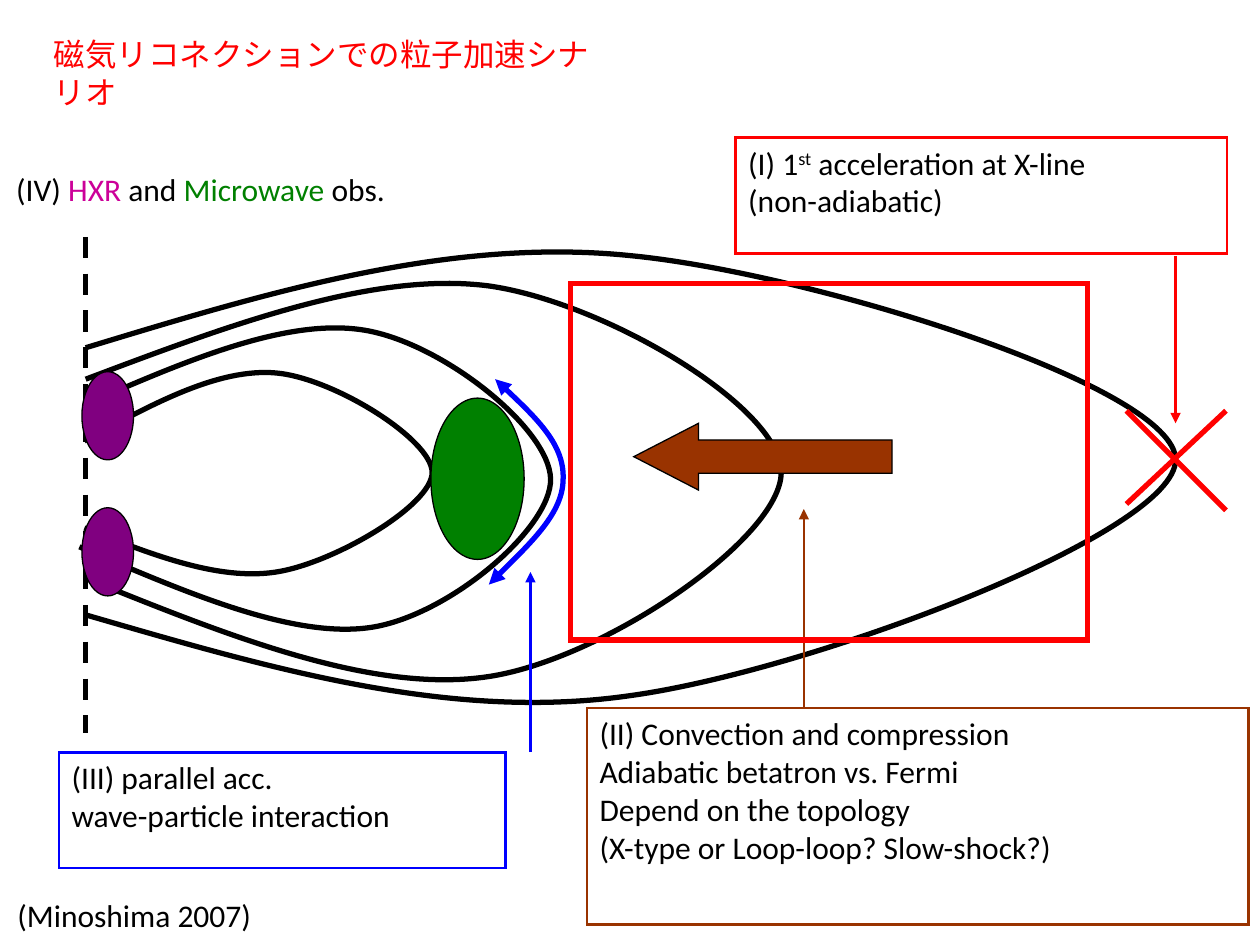
from pptx import Presentation
from pptx.dml.color import RGBColor
from pptx.enum.dml import MSO_LINE
from pptx.enum.shapes import MSO_CONNECTOR, MSO_SHAPE
from pptx.enum.text import MSO_ANCHOR, PP_ALIGN
from pptx.oxml.ns import qn
from pptx.util import Inches, Pt
from lxml.etree import SubElement

BLACK, RED, BLUE, BROWN = "000000", "FF0000", "0000FF", "993300"
PURPLE, GREEN, PINK = "800080", "008000", "CC0099"

FIELDS = [
    [(0.67, 3.5), (1.2, 3.21), (1.73, 2.92), (2.19, 2.96), (2.65, 3), (3.43, 3.49), (3.43, 3.75),
     (3.43, 4.01), (2.65, 4.47), (2.19, 4.54), (1.73, 4.61), (1.2, 4.4), (0.67, 4.19)],
    [(0.68, 3.21), (1.48, 2.86), (2.28, 2.52), (2.89, 2.62), (3.51, 2.72), (4.36, 3.4), (4.37, 3.8),
     (4.38, 4.19), (3.56, 4.89), (2.94, 4.98), (2.32, 5.07), (1.47, 4.7), (0.63, 4.34)],
    [(0.68, 3.01), (1.82, 2.58), (2.96, 2.15), (3.88, 2.27), (4.8, 2.4), (6.2, 3.23), (6.2, 3.75),
     (6.2, 4.27), (4.8, 5.23), (3.88, 5.37), (2.96, 5.51), (1.82, 5.05), (0.68, 4.59)],
    [(0.68, 2.76), (2.13, 2.32), (3.57, 1.88), (5.01, 2.03), (6.45, 2.17), (9.33, 3.07), (9.33, 3.65),
     (9.33, 4.23), (6.45, 5.32), (5.01, 5.52), (3.57, 5.73), (2.13, 5.3), (0.68, 4.88)],
]
BOUNCE = [(3.88, 4.64), (4.17, 4.35), (4.47, 4.07), (4.47, 3.8), (4.48, 3.53), (4.21, 3.27), (3.93, 3.01)]


def color(text):
    """Turn a hex string into a colour."""
    return RGBColor.from_string(text)


def stroke(shape, tint, width, ends=()):
    """Style an outline and put arrowheads on the named ends."""
    shape.line.color.rgb = color(tint)
    shape.line.width = Pt(width)
    for end in ends:
        SubElement(shape.line._get_or_add_ln(), qn(f"a:{end}"), type="triangle")


def bend(shape):
    """Turn each three straight segments into one cubic curve."""
    trace = next(shape._element.iter(qn("a:path")))
    legs = trace.findall(qn("a:lnTo"))
    for i in range(0, len(legs), 3):
        cubic = SubElement(trace, qn("a:cubicBezTo"))
        for leg in legs[i:i + 3]:
            cubic.append(leg[0])
            trace.remove(leg)


def curve(slide, points, tint=BLACK, ends=()):
    """Draw an open smooth curve."""
    first, *rest = [(Inches(x), Inches(y)) for x, y in points]
    builder = slide.shapes.build_freeform(*first)
    builder.add_line_segments(rest, close=False)
    shape = builder.convert_to_shape()
    bend(shape)
    shape.shadow.inherit = False
    shape.fill.background()
    stroke(shape, tint, 3, ends)


def line(slide, start, end, tint, width=3, ends=()):
    """Draw a straight line."""
    link = slide.shapes.add_connector(MSO_CONNECTOR.STRAIGHT, *map(Inches, start + end))
    stroke(link, tint, width, ends)
    SubElement(link._element.spPr, qn("a:effectLst"))
    return link


def solid(slide, kind, area, fill, tint=BLACK, width=0.75):
    """Draw a preset shape with sharp corners, hollow when fill is None."""
    shape = slide.shapes.add_shape(kind, *map(Inches, area))
    shape.shadow.inherit = False
    if fill:
        shape.fill.solid()
        shape.fill.fore_color.rgb = color(fill)
    else:
        shape.fill.background()
    stroke(shape, tint, width)
    SubElement(shape.line._get_or_add_ln(), qn("a:miter"), lim="800000")
    return shape


def write(shape, rows):
    """Fill a shape with rows of (text, colour, raised) runs."""
    frame = shape.text_frame
    frame.word_wrap = True
    frame.vertical_anchor = MSO_ANCHOR.TOP
    for i, row in enumerate(rows):
        para = frame.add_paragraph() if i else frame.paragraphs[0]
        para.alignment = PP_ALIGN.LEFT
        para.font.name = "Calibri"
        para.font.size = Pt(18)
        for text, tint, raised in row:
            run = para.add_run()
            run.text = text
            run.font.color.rgb = color(tint)
            if raised:
                run._r.get_or_add_rPr().set("baseline", "30000")


def plain(*texts, tint=BLACK):
    """Make rows of one run each."""
    return [[(text, tint, False)] for text in texts]


def box(slide, area, tint, rows):
    """Add a framed note."""
    write(solid(slide, MSO_SHAPE.RECTANGLE, area, None, tint, 1.5), rows)


def label(slide, area, rows):
    """Add unframed text."""
    write(slide.shapes.add_textbox(*map(Inches, area)), rows)


def main():
    """Build the slide on particle acceleration."""
    deck = Presentation()
    deck.slide_width, deck.slide_height = Inches(10), Inches(7.5)
    slide = deck.slides.add_slide(deck.slide_layouts[6])

    curve(slide, FIELDS[0])
    line(slide, (0.68, 1.88), (0.68, 5.82), BLACK).line.dash_style = MSO_LINE.DASH
    for field in FIELDS[1:]:
        curve(slide, field)
    line(slide, (9.73, 3.26), (8.94, 4), RED)
    line(slide, (8.94, 3.26), (9.73, 4.05), RED)

    arrow = solid(slide, MSO_SHAPE.LEFT_ARROW, (5.03, 3.36, 2.05, 0.53), BROWN)
    arrow.adjustments[1] = 0.97
    for top in (2.95, 4.03):
        solid(slide, MSO_SHAPE.OVAL, (0.65, top, 0.41, 0.7), PURPLE)
    solid(slide, MSO_SHAPE.OVAL, (3.42, 3.16, 0.74, 1.28), GREEN)
    curve(slide, BOUNCE, BLUE, ("headEnd", "tailEnd"))

    box(slide, (4.66, 5.62, 5.25, 1.72), BROWN, plain(
        "(II) Convection and compression", "Adiabatic betatron vs. Fermi",
        "Depend on the topology", "(X-type or Loop-loop? Slow-shock?)"))
    box(slide, (5.84, 1.09, 3.9, 0.92), RED, [
        [("(I) 1", BLACK, False), ("st", BLACK, True), (" acceleration at X-line", BLACK, False)],
        *plain("(non-adiabatic)")])
    box(slide, (0.47, 5.97, 3.54, 0.92), BLUE,
        plain("(III) parallel acc.", "wave-particle interaction"))
    label(slide, (0.03, 1.3, 4.36, 0.5), [
        [("(IV) ", BLACK, False), ("HXR", PINK, False), (" and ", BLACK, False),
         ("Microwave", GREEN, False), (" obs.", BLACK, False)]])

    for x, start, end, tint in ((9.33, 2.03, 3.36, RED), (6.38, 5.62, 4.04, BROWN),
                                (4.21, 5.97, 4.54, BLUE)):
        line(slide, (x, start), (x, end), tint, 1.5, ("tailEnd",))
    solid(slide, MSO_SHAPE.RECTANGLE, (4.53, 2.25, 4.1, 2.83), None, RED, 3)
    label(slide, (0.33, 0.23, 4.51, 0.4), plain("磁気リコネクションでの粒子加速シナリオ", tint=RED))
    label(slide, (0.04, 7.06, 2.07, 0.4), plain("(Minoshima 2007)"))

    deck.save("out.pptx")


if __name__ == "__main__":
    main()
